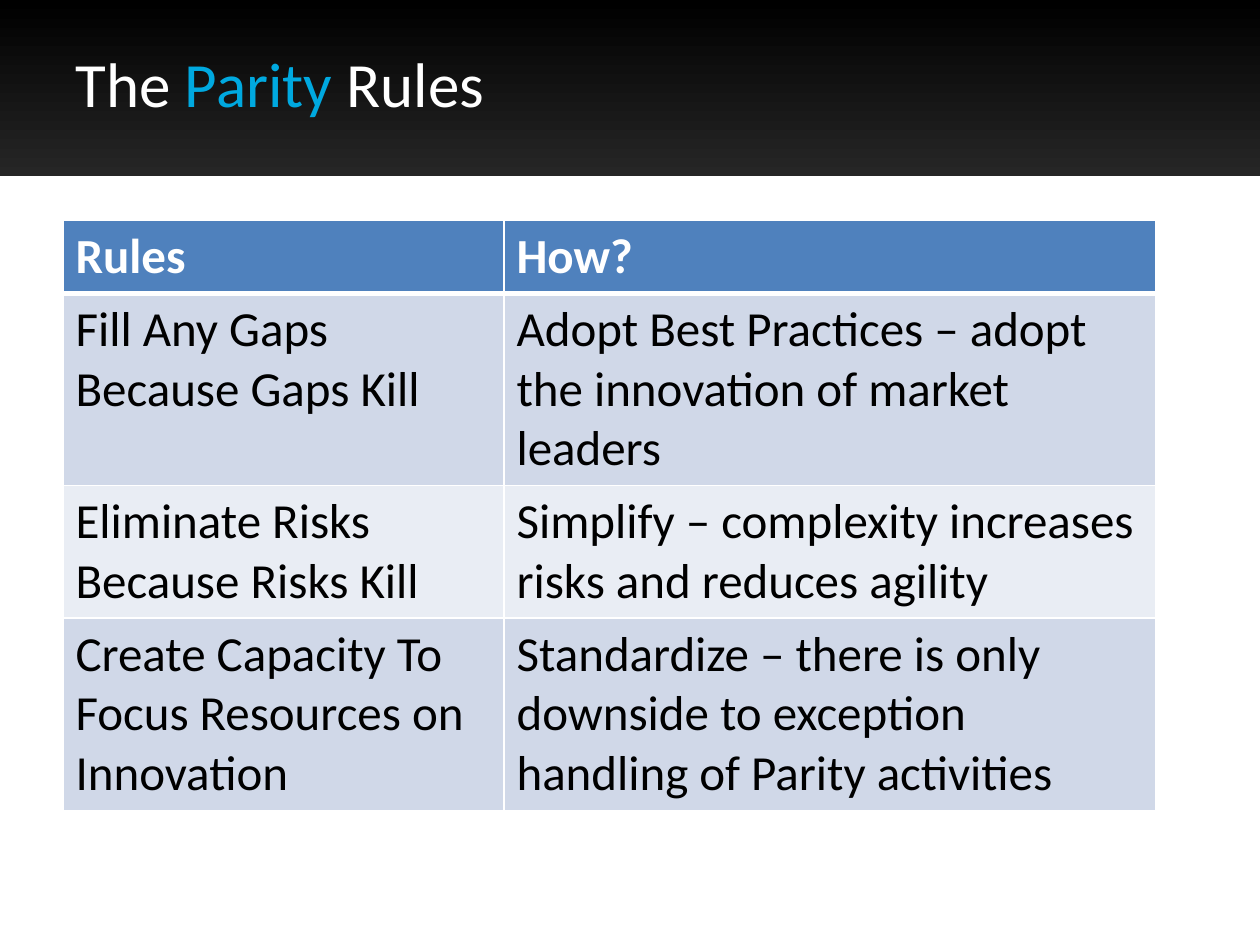
from lxml.etree import SubElement
from pptx import Presentation
from pptx.dml.color import RGBColor
from pptx.enum.shapes import MSO_SHAPE
from pptx.enum.text import MSO_ANCHOR, PP_ALIGN
from pptx.oxml.ns import qn
from pptx.util import Cm, Pt

COLORS = {
    "white": "FFFFFF",
    "black": "000000",
    "charcoal": "262626",
    "cyan": "00A9E0",
    "header": "4F81BD",
    "band_dark": "D0D8E8",
    "band_light": "E9EDF4",
}
FONT = "Calibri"
TITLE = [("The ", "white"), ("Parity", "cyan"), (" Rules", "white")]
ROWS = [
    ("Rules", "How?"),
    ("Fill Any Gaps Because Gaps Kill",
     "Adopt Best Practices – adopt the innovation of market leaders"),
    ("Eliminate Risks Because Risks Kill",
     "Simplify – complexity increases risks and reduces agility"),
    ("Create Capacity To Focus Resources on Innovation",
     "Standardize – there is only downside to exception handling of Parity activities"),
]
LINES_PER_ROW = [1, 3, 2, 3]
COLUMN_WIDTHS = [Cm(8.89), Cm(13.13)]
LINE_HEIGHT = Cm(1.21)
ROW_PADDING = Cm(0.25)


def rgb(name):
    return RGBColor.from_string(COLORS[name])


def format_run(r, size, color, bold=False):
    r.font.name = FONT
    r.font.size = Pt(size)
    r.font.bold = bold
    r.font.color.rgb = rgb(color)


def add_title_band(s, width):
    sp = s.shapes.add_shape(MSO_SHAPE.RECTANGLE, 0, 0, width, Cm(3.56))
    sp.shadow.inherit = False
    sp.line.fill.background()
    sp.fill.gradient()
    sp.fill.gradient_angle = 270
    stops = zip(sp.fill.gradient_stops, ("black", "charcoal"), (0, 1))
    for stop, color, position in stops:
        stop.color.rgb = rgb(color)
        stop.position = position
    s.shapes._spTree.insert(2, sp._element)


def set_title(s):
    sp = s.shapes.title
    sp.left, sp.top, sp.width, sp.height = Cm(1.27), Cm(0.76), Cm(22.86), Cm(2.84)
    tf = sp.text_frame
    tf.vertical_anchor = MSO_ANCHOR.TOP
    p = tf.paragraphs[0]
    p.alignment = PP_ALIGN.LEFT
    for text, color in TITLE:
        r = p.add_run()
        r.text = text
        format_run(r, 36, color)


def set_borders(cell, bottom):
    tc_pr = cell._tc.get_or_add_tcPr()
    for side, points in (("L", 1), ("R", 1), ("T", 1), ("B", bottom)):
        ln = SubElement(tc_pr, qn(f"a:ln{side}"), w=str(Pt(points)))
        fill = SubElement(ln, qn("a:solidFill"))
        SubElement(fill, qn("a:srgbClr"), val=COLORS["white"])


def fill_cell(cell, text, row):
    is_header = row == 0
    set_borders(cell, 3 if is_header else 1)
    band = "band_dark" if row % 2 else "band_light"
    cell.fill.solid()
    cell.fill.fore_color.rgb = rgb("header" if is_header else band)
    cell.text_frame.text = text
    r = cell.text_frame.paragraphs[0].runs[0]
    format_run(r, 28, "white" if is_header else "black", is_header)


def add_rules_table(s):
    heights = [LINE_HEIGHT * n + ROW_PADDING for n in LINES_PER_ROW]
    table = s.shapes.add_table(
        len(ROWS), len(COLUMN_WIDTHS), Cm(1.27), Cm(4.45),
        sum(COLUMN_WIDTHS), sum(heights)).table
    for column, width in zip(table.columns, COLUMN_WIDTHS):
        column.width = width
    for i, (texts, height) in enumerate(zip(ROWS, heights)):
        table.rows[i].height = height
        for j, text in enumerate(texts):
            fill_cell(table.cell(i, j), text, i)


def main():
    prs = Presentation()
    prs.slide_width, prs.slide_height = Cm(25.4), Cm(19.05)
    s = prs.slides.add_slide(prs.slide_layouts[5])
    add_title_band(s, prs.slide_width)
    set_title(s)
    add_rules_table(s)
    prs.save("out.pptx")


if __name__ == "__main__":
    main()
